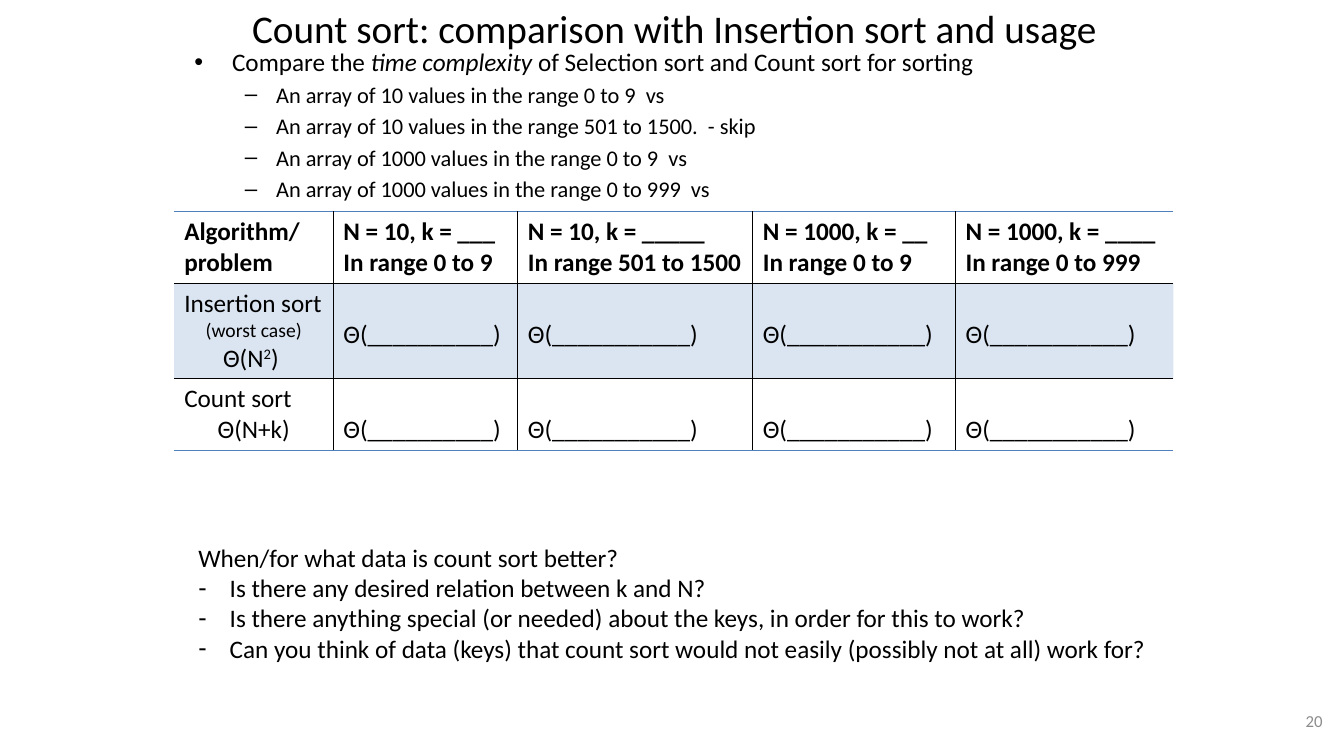
import dataclasses

import lxml.etree
import pptx
import pptx.dml.color
import pptx.enum.text
import pptx.oxml.ns
import pptx.util

Cm, Pt = pptx.util.Cm, pptx.util.Pt
Align, Anchor = pptx.enum.text.PP_ALIGN, pptx.enum.text.MSO_ANCHOR
qn = pptx.oxml.ns.qn


@dataclasses.dataclass(frozen=True)
class Theme:
    font: str = "Calibri"
    ink: str = "000000"
    grey: str = "8C8C8C"
    blue: str = "4F81BD"
    title: int = 28
    body: int = 18
    sub: int = 16
    note: int = 14
    page: int = 12


THEME = Theme()
COLS = (4.01, 4.65, 5.92, 5.11, 5.49)
ROWS = (1.81, 2.4, 1.81)
HEADS = (
    "Algorithm/ problem",
    "N = 10, k = ___\nIn range 0 to 9",
    "N = 10, k = _____\nIn range 501 to 1500",
    "N = 1000, k = __\nIn range 0 to 9",
    "N = 1000, k = ____\nIn range 0 to 999",
)
BLANKS = (10, 11, 11, 11)
ARRAYS = (
    "An array of 10 values in the range 0 to 9  vs",
    "An array of 10 values in the range 501 to 1500.  - skip",
    "An array of 1000 values in the range 0 to 9  vs",
    "An array of 1000 values in the range 0 to 999  vs",
)
ASKS = (
    "When/for what data is count sort better?",
    "Is there any desired relation between k and N?",
    "Is there anything special (or needed) about the keys, in order for this to work?",
    "Can you think of data (keys) that count sort would not easily (possibly not at all) work for?",
)


# Text
def style(run, size, color=THEME.ink, bold=False):
    font = run.font
    font.name, font.size, font.bold = THEME.font, Pt(size), bold
    font.color.rgb = pptx.dml.color.RGBColor.from_string(color)


def paint(frame, size, color=THEME.ink, bold=False):
    for par in frame.paragraphs:
        for run in par.runs:
            style(run, size, color, bold)


def extend(par, text, size):
    run = par.add_run()
    run.text = text
    style(run, size)
    return run


def bullet(par, mark, left, hang):
    props = par._p.get_or_add_pPr()
    props.set("marL", str(Cm(left)))
    props.set("indent", str(-Cm(hang)))
    face = lxml.etree.SubElement(props, qn("a:buFont"))
    face.set("typeface", "Arial")
    lxml.etree.SubElement(props, qn("a:buChar")).set("char", mark)


def add_text(slide, box, text, size, color=THEME.ink, align=Align.LEFT, anchor=Anchor.TOP):
    frame = slide.shapes.add_textbox(*map(Cm, box)).text_frame
    frame.word_wrap = True
    frame.vertical_anchor = anchor
    frame.text = text
    paint(frame, size, color)
    for par in frame.paragraphs:
        par.alignment = align
    return frame


# Table cells
def border(cell, sides):
    props = cell._tc.get_or_add_tcPr()
    for spot, (side, color) in enumerate(sides.items()):
        line = lxml.etree.Element(qn("a:ln" + side), w=str(Pt(1)))
        if color:
            fill = lxml.etree.SubElement(line, qn("a:solidFill"))
            lxml.etree.SubElement(fill, qn("a:srgbClr")).set("val", color)
        else:
            lxml.etree.SubElement(line, qn("a:noFill"))
        props.insert(spot, line)


def tint(cell):
    cell.fill.solid()
    cell.fill.fore_color.rgb = pptx.dml.color.RGBColor.from_string(THEME.blue)
    color = cell._tc.tcPr.find(qn("a:solidFill")).find(qn("a:srgbClr"))
    lxml.etree.SubElement(color, qn("a:alpha")).set("val", "20000")


def add_table(slide):
    size = (len(ROWS), len(COLS))
    area = map(Cm, (4.39, 5.33, sum(COLS), sum(ROWS)))
    table = slide.shapes.add_table(*size, *area).table
    table.first_row = table.horz_banding = False
    for col, width in zip(table.columns, COLS):
        col.width = Cm(width)
    for row, height in zip(table.rows, ROWS):
        row.height = Cm(height)

    # Wording
    names = ("Insertion sort", "Count sort\nΘ(N+k)")
    lines = [HEADS]
    for name in names:
        lines.append((name, *(f"Θ({'_' * count})" for count in BLANKS)))

    # Fills and rules
    for r, line in enumerate(lines):
        for c, text in enumerate(line):
            cell = table.cell(r, c)
            cell.text_frame.text = text
            paint(cell.text_frame, THEME.body, bold=r == 0)
            if r and c:
                cell.margin_top = Cm(0.9)
            if r == 1:
                tint(cell)
            else:
                cell.fill.background()
            border(cell, {
                "L": THEME.ink if c else None,
                "R": THEME.ink if c < size[1] - 1 else None,
                "T": THEME.ink if r else THEME.blue,
                "B": THEME.ink if r < size[0] - 1 else THEME.blue,
            })

    # Complexity of each sort
    par = table.cell(1, 0).text_frame.add_paragraph()
    par.alignment = Align.CENTER
    extend(par, "(worst case) ", THEME.note)
    extend(par, "Θ(N", THEME.body)
    extend(par, "2", THEME.body).font._element.set("baseline", "30000")
    extend(par, ") ", THEME.body)
    table.cell(2, 0).text_frame.paragraphs[1].alignment = Align.CENTER


# Bulleted lists
def add_tasks(slide):
    text = "\n".join(("Compare the ", *ARRAYS))
    frame = add_text(slide, (4.65, 1.04, 22.86, 4.88), text, THEME.sub)
    lead, *subs = frame.paragraphs
    style(lead.runs[0], THEME.body)
    extend(lead, "time complexity ", THEME.body).font.italic = True
    extend(lead, "of Selection sort and Count sort for sorting", THEME.body)
    lead.space_before = Pt(3.6)
    bullet(lead, "•", 0.95, 0.95)
    for par in subs:
        par.level = 1
        par.space_before = Pt(3.2)
        bullet(par, "–", 2.06, 0.79)


def add_asks(slide):
    frame = add_text(slide, (4.75, 13.54, 24.49, 3.33), "\n".join(ASKS), THEME.body)
    for par in frame.paragraphs[1:]:
        bullet(par, "-", 0.79, 0.79)


def main():
    deck = pptx.Presentation()
    deck.slide_width, deck.slide_height = Cm(33.87), Cm(19.05)
    slide = deck.slides.add_slide(deck.slide_layouts[6])
    add_text(slide, (25.68, 17.65, 7.9, 1.02), "20", THEME.page,
             THEME.grey, Align.RIGHT, Anchor.MIDDLE)
    add_table(slide)
    add_tasks(slide)
    add_asks(slide)
    add_text(slide, (4.55, 0, 24.89, 1.4),
             "Count sort: comparison with Insertion sort and usage",
             THEME.title, align=Align.CENTER, anchor=Anchor.MIDDLE)
    deck.save("out.pptx")


if __name__ == "__main__":
    main()
